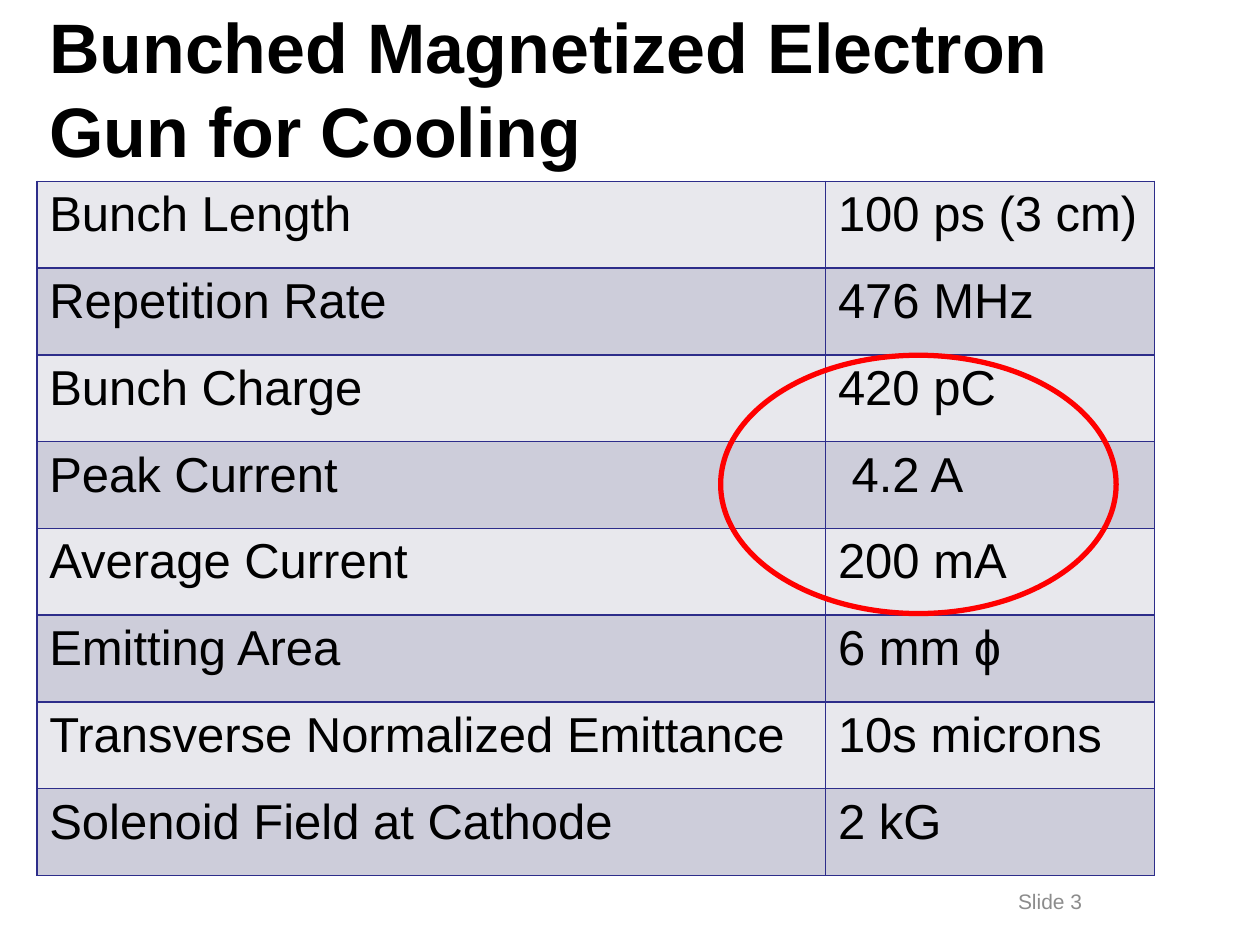
from dataclasses import dataclass

from lxml import etree
from pptx import Presentation
from pptx import util as u
from pptx.dml.color import RGBColor
from pptx.enum import shapes, text
from pptx.oxml import ns


@dataclass(frozen=True)
class Theme:
    font: str = "Arial"
    ink: str = "000000"
    muted: str = "8C8C8C"
    border: str = "2D2D8A"
    accent: str = "FF0000"
    bands: tuple = ("E8E8ED", "CDCDDA")
    title_size: float = 40
    body_size: float = 28
    footer_size: float = 12
    border_width: float = 1
    ring_width: float = 3


class SlideBuilder:
    def __init__(self, s, theme):
        self.s = s
        self.theme = theme

    def run(self, p, words, size, color, bold=False):
        r = p.add_run()
        r.text = words
        r.font.name = self.theme.font
        r.font.size = u.Pt(size)
        r.font.bold = bold
        r.font.color.rgb = RGBColor.from_string(color)

    def text_box(self, box, words, size, color, bold=False, align=text.PP_ALIGN.LEFT):
        sp = self.s.shapes.add_textbox(*map(u.Pt, box))
        tf = sp.text_frame
        tf.word_wrap = True
        tf.vertical_anchor = text.MSO_ANCHOR.MIDDLE
        p = tf.paragraphs[0]
        p.alignment = align
        self.run(p, words, size, color, bold)

    def cell_borders(self, cell):
        tc_pr = cell._tc.get_or_add_tcPr()
        width = str(u.Pt(self.theme.border_width))
        for i, side in enumerate(("lnL", "lnR", "lnT", "lnB")):
            ln = etree.Element(ns.qn(f"a:{side}"), w=width)
            fill = etree.SubElement(ln, ns.qn("a:solidFill"))
            etree.SubElement(fill, ns.qn("a:srgbClr"), val=self.theme.border)
            tc_pr.insert(i, ln)

    def table(self, left, top, widths, row_height, rows):
        th = self.theme
        frame = self.s.shapes.add_table(
            len(rows), len(widths), u.Pt(left), u.Pt(top),
            u.Pt(sum(widths)), u.Pt(row_height * len(rows)))
        tbl = frame.table
        tbl.first_row = False
        for column, width in zip(tbl.columns, widths):
            column.width = u.Pt(width)
        for i, row in enumerate(rows):
            tbl.rows[i].height = u.Pt(row_height)
            for j, words in enumerate(row):
                cell = tbl.cell(i, j)
                cell.fill.solid()
                cell.fill.fore_color.rgb = RGBColor.from_string(th.bands[i % 2])
                self.cell_borders(cell)
                self.run(cell.text_frame.paragraphs[0], words, th.body_size, th.ink)

    def ring(self, box):
        sp = self.s.shapes.add_shape(shapes.MSO_SHAPE.OVAL, *map(u.Pt, box))
        sp.shadow.inherit = False
        sp.fill.background()
        sp.line.color.rgb = RGBColor.from_string(self.theme.accent)
        sp.line.width = u.Pt(self.theme.ring_width)


GUN_PARAMETERS = [
    ("Bunch Length", "100 ps (3 cm)"),
    ("Repetition Rate", "476 MHz"),
    ("Bunch Charge", "420 pC"),
    ("Peak Current", " 4.2 A"),
    ("Average Current", "200 mA"),
    ("Emitting Area", "6 mm ɸ"),
    ("Transverse Normalized Emittance", "10s microns"),
    ("Solenoid Field at Cathode", "2 kG"),
]


def main():
    prs = Presentation()
    prs.slide_width, prs.slide_height = u.Pt(720), u.Pt(540)
    theme = Theme()
    b = SlideBuilder(prs.slides.add_slide(prs.slide_layouts[6]), theme)
    b.text_box((21, 0.7, 654.5, 98), "Bunched Magnetized Electron Gun for Cooling",
               theme.title_size, theme.ink, bold=True)
    b.table(21, 103.6, (450.7, 188), 49.6, GUN_PARAMETERS)
    b.text_box((516.2, 500.4, 167.8, 28.8), "Slide 3",
               theme.footer_size, theme.muted, align=text.PP_ALIGN.CENTER)
    b.ring((411.8, 203, 226, 147.6))
    prs.save("out.pptx")


if __name__ == "__main__":
    main()
